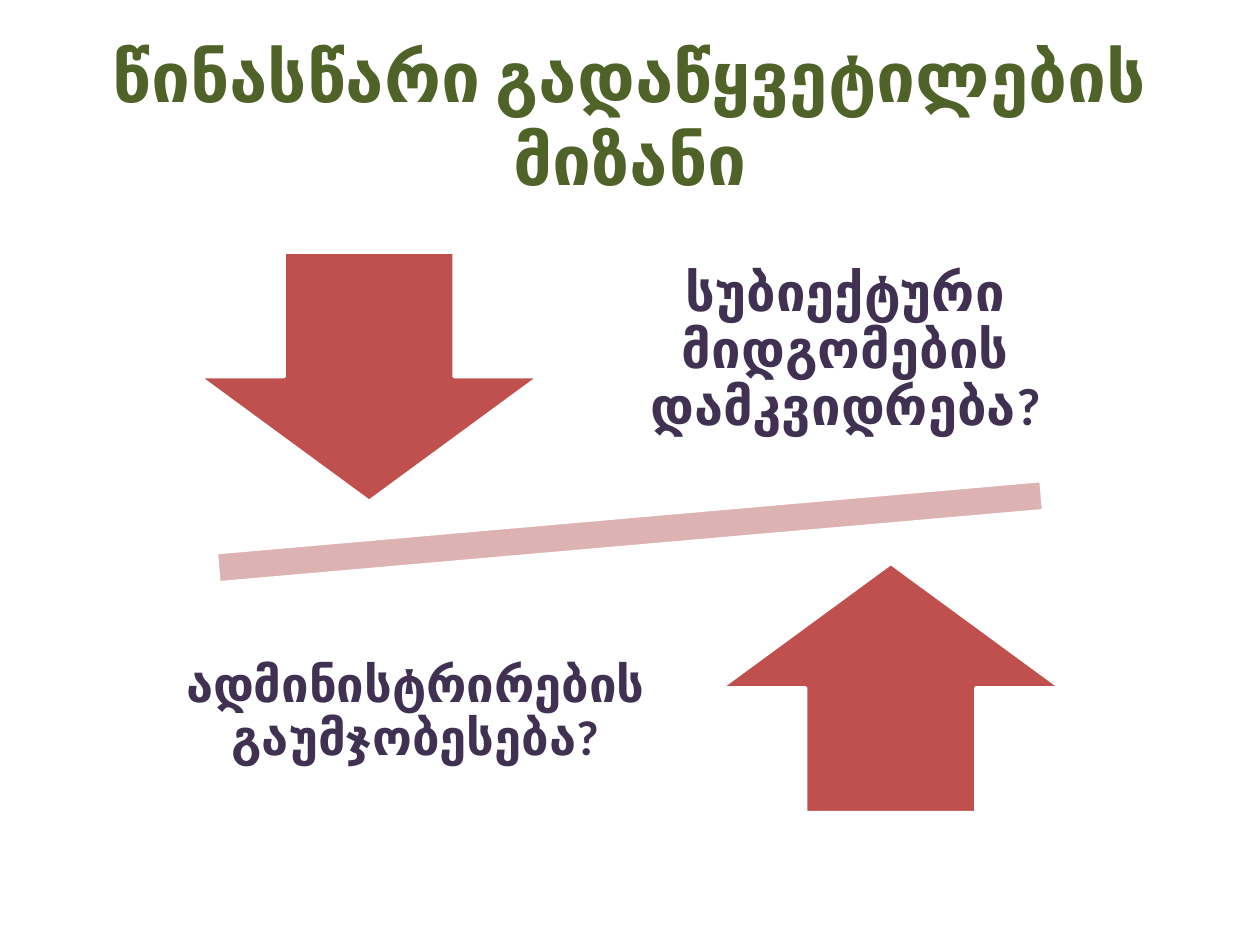
from pptx import Presentation
from pptx.dml.color import RGBColor
from pptx.enum.shapes import MSO_SHAPE as SHAPE
from pptx.enum.text import MSO_ANCHOR as ANCHOR, PP_ALIGN as ALIGN
from pptx.util import Inches, Pt

GREEN = RGBColor(0x4F, 0x62, 0x28)
PURPLE = RGBColor(0x40, 0x31, 0x52)
RED = RGBColor(0xC0, 0x50, 0x4D)
PINK = RGBColor(0xDC, 0xB3, 0xB2)
WHITE = RGBColor(0xFF, 0xFF, 0xFF)

TITLE_ONLY = 5
SLIDE_W, SLIDE_H = 10, 7.5
ARROW_W, ARROW_H = 2.7, 1.98
ARROW_LEFT = 1.58


def write_text(tf, text, size, color, inset=0.1, spacing=None):
    tf.word_wrap = True
    tf.vertical_anchor = ANCHOR.MIDDLE
    tf.margin_left = tf.margin_right = Inches(inset)
    tf.margin_top = tf.margin_bottom = Inches(min(inset, 0.23))
    p = tf.paragraphs[0]
    p.alignment = ALIGN.CENTER
    p.line_spacing = spacing
    r = p.add_run()
    r.text = text
    r.font.name = "Calibri"
    r.font.size = Pt(size)
    r.font.bold = True
    r.font.color.rgb = color


class SlideBuilder:
    def __init__(self, slide):
        self.slide = slide

    def title(self, text, left, top, width, height):
        sp = self.slide.shapes.title
        sp.left, sp.top = Inches(left), Inches(top)
        sp.width, sp.height = Inches(width), Inches(height)
        write_text(sp.text_frame, text, 39.6, GREEN)

    def shape(self, kind, left, top, width, height, fill, rotation=0):
        sp = self.slide.shapes.add_shape(
            kind, Inches(left), Inches(top), Inches(width), Inches(height))
        sp.shadow.inherit = False
        sp.fill.solid()
        sp.fill.fore_color.rgb = fill
        sp.line.color.rgb = WHITE
        sp.line.width = Pt(2)
        sp.rotation = rotation

    def label(self, text, left, top, width, height, size, inset):
        sp = self.slide.shapes.add_textbox(
            Inches(left), Inches(top), Inches(width), Inches(height))
        write_text(sp.text_frame, text, size, PURPLE, inset=inset, spacing=0.9)


def main():
    prs = Presentation()
    prs.slide_width, prs.slide_height = Inches(SLIDE_W), Inches(SLIDE_H)
    builder = SlideBuilder(prs.slides.add_slide(prs.slide_layouts[TITLE_ONLY]))

    builder.title("წინასწარი გადაწყვეტილების მიზანი", 0.5, 0.3, 9, 1.25)
    builder.shape(SHAPE.MATH_MINUS, 0.53, 3.71, 8.94, 1.02, PINK, rotation=355)

    builder.shape(SHAPE.DOWN_ARROW, ARROW_LEFT, 2, ARROW_W, ARROW_H, RED)
    builder.label("სუბიექტური მიდგომების დამკვიდრება?",
                  4.72, 1.75, 3.98, 2.08, size=30, inset=0.23)

    # The up arrow mirrors the down arrow across the slide's centre line.
    builder.shape(SHAPE.UP_ARROW, SLIDE_W - ARROW_LEFT - ARROW_W, 4.47,
                  ARROW_W, ARROW_H, RED)
    builder.label("ადმინისტრირების გაუმჯობესება?",
                  1.17, 4.62, 4.25, 2.08, size=28, inset=0.22)

    prs.save("out.pptx")


if __name__ == "__main__":
    main()
